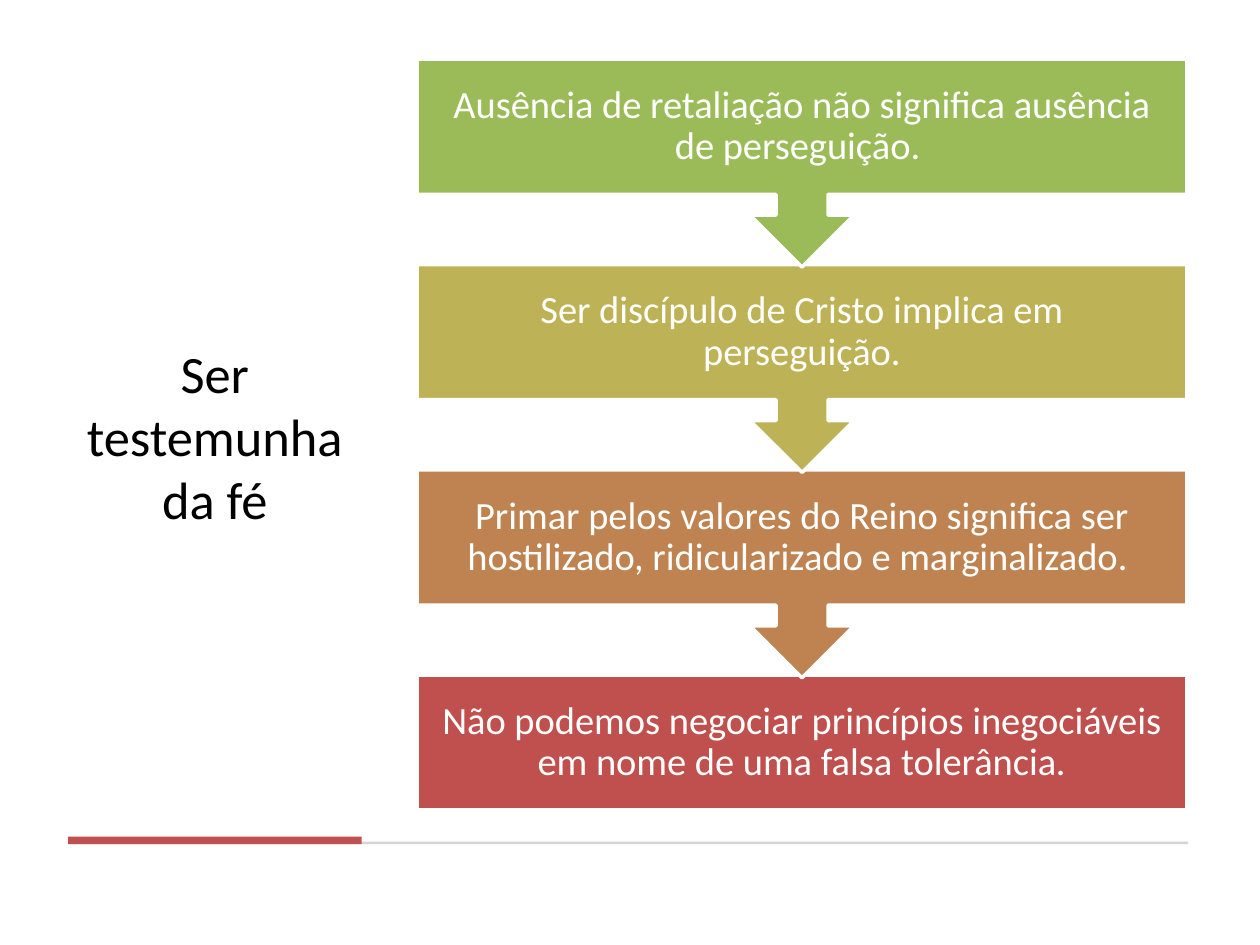
from dataclasses import dataclass

from pptx import Presentation
from pptx.dml.color import RGBColor
from pptx.enum.shapes import MSO_SHAPE
from pptx.enum.text import MSO_ANCHOR, PP_ALIGN
from pptx.util import Inches, Pt

RECTANGLE = MSO_SHAPE.RECTANGLE
CALLOUT = MSO_SHAPE.UP_ARROW_CALLOUT
MIDDLE = MSO_ANCHOR.MIDDLE
CENTER = PP_ALIGN.CENTER

BLACK = RGBColor(0x00, 0x00, 0x00)
WHITE = RGBColor(0xFF, 0xFF, 0xFF)
GRAY = RGBColor(0xD5, 0xD5, 0xD5)
RED = RGBColor(0xC0, 0x50, 0x4D)
BROWN = RGBColor(0xBE, 0x83, 0x51)
OLIVE = RGBColor(0xBD, 0xB2, 0x55)
GREEN = RGBColor(0x9B, 0xBB, 0x59)

STEP_LEFT, STEP_TOP, STEP_WIDTH = 3.31, 0.47, 6.11
STEP_PITCH = 1.63
BOX_HEIGHT, CALLOUT_HEIGHT = 1.07, 1.65
STEP_INSET = 0.17


@dataclass(frozen=True)
class Area:
    """A rectangle on the slide, in inches."""

    left: float
    top: float
    width: float
    height: float

    def lengths(self) -> list:
        """Return left, top, width and height as lengths."""
        return [Inches(value) for value in (self.left, self.top, self.width, self.height)]


@dataclass(frozen=True)
class Step:
    """One block of the descending process."""

    text: str
    color: RGBColor
    ending: str = ""


STEPS = [
    Step("Ausência de retaliação não significa ausência de perseguição. ", GREEN),
    Step("Ser discípulo de Cristo implica em perseguição.", OLIVE),
    Step("Primar pelos valores do Reino significa ser hostilizado, ridicularizado e marginalizado. ", BROWN),
    Step("Não podemos negociar princípios inegociáveis em nome de uma falsa tolerância", RED, "."),
]


def add_block(slide, kind: MSO_SHAPE, area: Area, color: RGBColor, rotation: float = 0):
    """Add a plain filled shape without an outline."""
    shape = slide.shapes.add_shape(kind, *area.lengths())
    shape.shadow.inherit = False
    shape.rotation = rotation
    shape.fill.solid()
    shape.fill.fore_color.rgb = color
    shape.line.fill.background()
    return shape


def add_text(slide, area: Area, text: str, size: float, color: RGBColor, frame_format: dict):
    """Add a centred text box and return its paragraph."""
    frame = slide.shapes.add_textbox(*area.lengths()).text_frame
    for name, value in {"word_wrap": True, "vertical_anchor": MIDDLE, **frame_format}.items():
        setattr(frame, name, value)
    paragraph = frame.paragraphs[0]
    paragraph.alignment = CENTER
    paragraph.add_run().text = text
    for name, value in {"name": "Calibri", "size": Pt(size)}.items():
        setattr(paragraph.font, name, value)
    paragraph.font.color.rgb = color
    return paragraph


def add_step(slide, index: int, step: Step) -> None:
    """Add one process block, with an arrow unless it is the last."""
    top = STEP_TOP + index * STEP_PITCH
    box = Area(STEP_LEFT, top, STEP_WIDTH, BOX_HEIGHT)
    if index == len(STEPS) - 1:
        shape = add_block(slide, RECTANGLE, box, step.color)
    else:
        callout = Area(STEP_LEFT, top, STEP_WIDTH, CALLOUT_HEIGHT)
        shape = add_block(slide, CALLOUT, callout, step.color, 180)
    shape.line.color.rgb = WHITE
    shape.line.width = Pt(2)

    sides = ("left", "top", "right", "bottom")
    margins = {f"margin_{side}": Inches(STEP_INSET) for side in sides}
    paragraph = add_text(slide, box, step.text, 22, WHITE, margins)
    paragraph.line_spacing = 0.9
    if step.ending:
        run = paragraph.add_run()
        run.text = step.ending
        run.font.italic = True


def main() -> None:
    """Build and save the slide."""
    presentation = Presentation()
    presentation.slide_width = Inches(10)
    presentation.slide_height = Inches(7.5)
    slide = presentation.slides.add_slide(presentation.slide_layouts[6])

    add_text(slide, Area(0.54, 0.47, 2.33, 5.97), "Ser testemunha da fé", 30, BLACK, {})
    add_block(slide, RECTANGLE, Area(0.54, 6.68, 8.89, 0.02), GRAY)
    add_block(slide, RECTANGLE, Area(0.54, 6.64, 2.33, 0.06), RED)
    for index, step in reversed(list(enumerate(STEPS))):
        add_step(slide, index, step)

    presentation.save("out.pptx")


if __name__ == "__main__":
    main()
